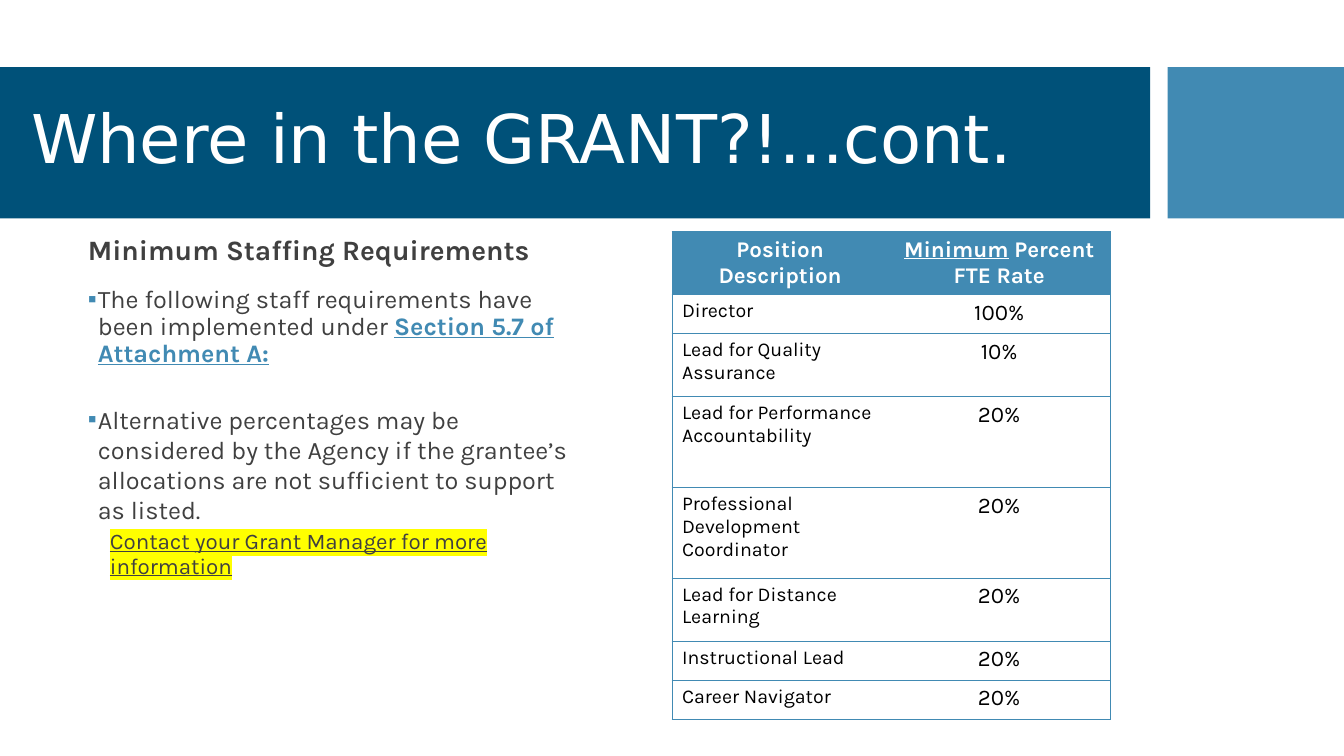
from dataclasses import dataclass

from lxml.etree import SubElement
from pptx import Presentation
from pptx.dml.color import RGBColor
from pptx.enum.shapes import MSO_SHAPE
from pptx.enum.text import MSO_ANCHOR, MSO_AUTO_SIZE, PP_ALIGN
from pptx.oxml.ns import qn
from pptx.util import Pt

COLORS = {
    "navy": "005179",
    "blue": "418AB3",
    "white": "FFFFFF",
    "gray": "404040",
    "black": "000000",
    "yellow": "FFFF00",
}
TITLE_FONT = "DejaVu Sans"
BODY_FONT = "Karla"
PLAIN_TABLE_STYLE = "{2D5ABB26-0587-4C30-8999-92F81FD0307C}"


@dataclass
class Band:
    left: float
    width: float
    color: str


@dataclass
class Span:
    text: str
    size: float
    color: str = "gray"
    bold: bool = False
    underline: bool = False
    highlight: str = ""
    font: str = BODY_FONT


@dataclass
class Item:
    spans: list[Span]
    before: float = 0
    after: float = 2
    spacing: float = 0.9
    margin: float = 0
    indent: float = 0
    bullet: str = ""
    level: int = 0


@dataclass
class Position:
    name: str
    rate: str
    height: float


BANDS = [Band(0, 821.5, "navy"), Band(834, 126, "blue")]

REQUIREMENTS = [
    Item([Span("Minimum Staffing Requirements", 20, bold=True)]),
    Item(
        [
            Span("The following staff requirements have been implemented under ", 18),
            Span("Section 5.7 of Attachment A:", 18, "blue", True, True),
        ],
        before=12, margin=7.2, indent=-7.2, bullet="▪",
    ),
    Item(
        [Span("Alternative percentages may be considered by the Agency if the grantee’s "
              "allocations are not sufficient to support as listed.", 18)],
        before=23.5, spacing=1, margin=7.2, indent=-7.2, bullet="▪",
    ),
    Item(
        [Span("Contact your Grant Manager for more information", 16,
              underline=True, highlight="yellow")],
        before=2, after=4, margin=15.84, level=1,
    ),
]

HEADER_HEIGHT = 45
POSITIONS = [
    Position("Director", "100%", 28),
    Position("Lead for Quality Assurance", "10%", 45),
    Position("Lead for Performance Accountability", "20%", 65),
    Position("Professional Development Coordinator", "20%", 64.5),
    Position("Lead for Distance Learning", "20%", 45),
    Position("Instructional Lead", "20%", 28),
    Position("Career Navigator", "20%", 28),
]


def rgb(name: str) -> RGBColor:
    return RGBColor.from_string(COLORS[name])


def place(shape, left: float, top: float, width: float, height: float) -> None:
    shape.left, shape.top = Pt(left), Pt(top)
    shape.width, shape.height = Pt(width), Pt(height)


def write_spans(paragraph, spans: list[Span]) -> None:
    for span in spans:
        run = paragraph.add_run()
        run.text = span.text
        run.font.size = Pt(span.size)
        run.font.bold = span.bold
        run.font.underline = span.underline
        run.font.color.rgb = rgb(span.color)
        run.font.name = span.font
        if span.highlight:
            properties = run._r.get_or_add_rPr()
            marker = SubElement(properties, qn("a:highlight"))
            SubElement(marker, qn("a:srgbClr"), val=COLORS[span.highlight])
            properties.find(qn("a:latin")).addprevious(marker)


def write_item(paragraph, item: Item) -> None:
    properties = paragraph._p.get_or_add_pPr()
    properties.set("marL", str(Pt(item.margin)))
    properties.set("indent", str(Pt(item.indent)))
    if item.bullet:
        bullet_color = SubElement(properties, qn("a:buClr"))
        SubElement(bullet_color, qn("a:srgbClr"), val=COLORS["blue"])
        SubElement(properties, qn("a:buChar"), char=item.bullet)
    else:
        SubElement(properties, qn("a:buNone"))
    paragraph.level = item.level
    paragraph.alignment = PP_ALIGN.LEFT
    paragraph.line_spacing = item.spacing
    paragraph.space_before = Pt(item.before)
    paragraph.space_after = Pt(item.after)
    write_spans(paragraph, item.spans)


def draw_band(slide, band: Band) -> None:
    block = slide.shapes.add_shape(
        MSO_SHAPE.RECTANGLE, Pt(band.left), Pt(48), Pt(band.width), Pt(108))
    block.shadow.inherit = False
    block.fill.solid()
    block.fill.fore_color.rgb = rgb(band.color)
    block.line.fill.background()
    slide.shapes._spTree.insert(2, block._element)


def draw_title(heading) -> None:
    place(heading, 15, 59, 795.5, 85)
    frame = heading.text_frame
    frame.auto_size = MSO_AUTO_SIZE.NONE
    frame.vertical_anchor = MSO_ANCHOR.MIDDLE
    write_item(frame.paragraphs[0], Item(
        [Span("Where in the GRANT?!...cont.", 48, "white", font=TITLE_FONT)], after=0))


def draw_requirements(body) -> None:
    place(body, 55.5, 165.5, 370, 349)
    body.fill.solid()
    body.fill.fore_color.rgb = rgb("white")
    frame = body.text_frame
    frame.auto_size = MSO_AUTO_SIZE.NONE
    frame.vertical_anchor = MSO_ANCHOR.TOP
    for index, item in enumerate(REQUIREMENTS):
        write_item(frame.add_paragraph() if index else frame.paragraphs[0], item)


def fill_cell(cell, spans: list[Span], centered: bool, outer_side: str, fill: str = "") -> None:
    paragraph = cell.text_frame.paragraphs[0]
    paragraph.alignment = PP_ALIGN.CENTER if centered else PP_ALIGN.LEFT
    write_spans(paragraph, spans)
    properties = cell._tc.get_or_add_tcPr()
    for side in (outer_side, "lnT", "lnB"):
        border = SubElement(properties, qn(f"a:{side}"), w=str(Pt(0.75)))
        solid = SubElement(border, qn("a:solidFill"))
        SubElement(solid, qn("a:srgbClr"), val=COLORS["blue"])
    if fill:
        cell.fill.solid()
        cell.fill.fore_color.rgb = rgb(fill)
    else:
        cell.fill.background()


def draw_staffing(slide) -> None:
    heights = [HEADER_HEIGHT] + [position.height for position in POSITIONS]
    staffing = slide.shapes.add_table(
        len(heights), 2, Pt(480), Pt(165.5), Pt(313), Pt(sum(heights))).table
    staffing._tbl.tblPr.find(qn("a:tableStyleId")).text = PLAIN_TABLE_STYLE
    for column, width in zip(staffing.columns, (154.5, 158.5)):
        column.width = Pt(width)
    for row, height in zip(staffing.rows, heights):
        row.height = Pt(height)
    fill_cell(staffing.cell(0, 0), [Span("Position Description", 16, "white", True)],
              True, "lnL", "blue")
    fill_cell(staffing.cell(0, 1), [Span("Minimum", 16, "white", True, True),
                                    Span(" Percent FTE Rate", 16, "white", True)],
              True, "lnR", "blue")
    for row, position in enumerate(POSITIONS, 1):
        fill_cell(staffing.cell(row, 0), [Span(position.name, 14, "black")], False, "lnL")
        fill_cell(staffing.cell(row, 1), [Span(position.rate, 16, "black")], True, "lnR")


def main() -> None:
    deck = Presentation()
    deck.slide_width, deck.slide_height = Pt(960), Pt(540)
    slide = deck.slides.add_slide(deck.slide_layouts[1])
    for band in BANDS:
        draw_band(slide, band)
    draw_title(slide.shapes.title)
    draw_requirements(slide.placeholders[1])
    draw_staffing(slide)
    deck.save("out.pptx")


if __name__ == "__main__":
    main()
